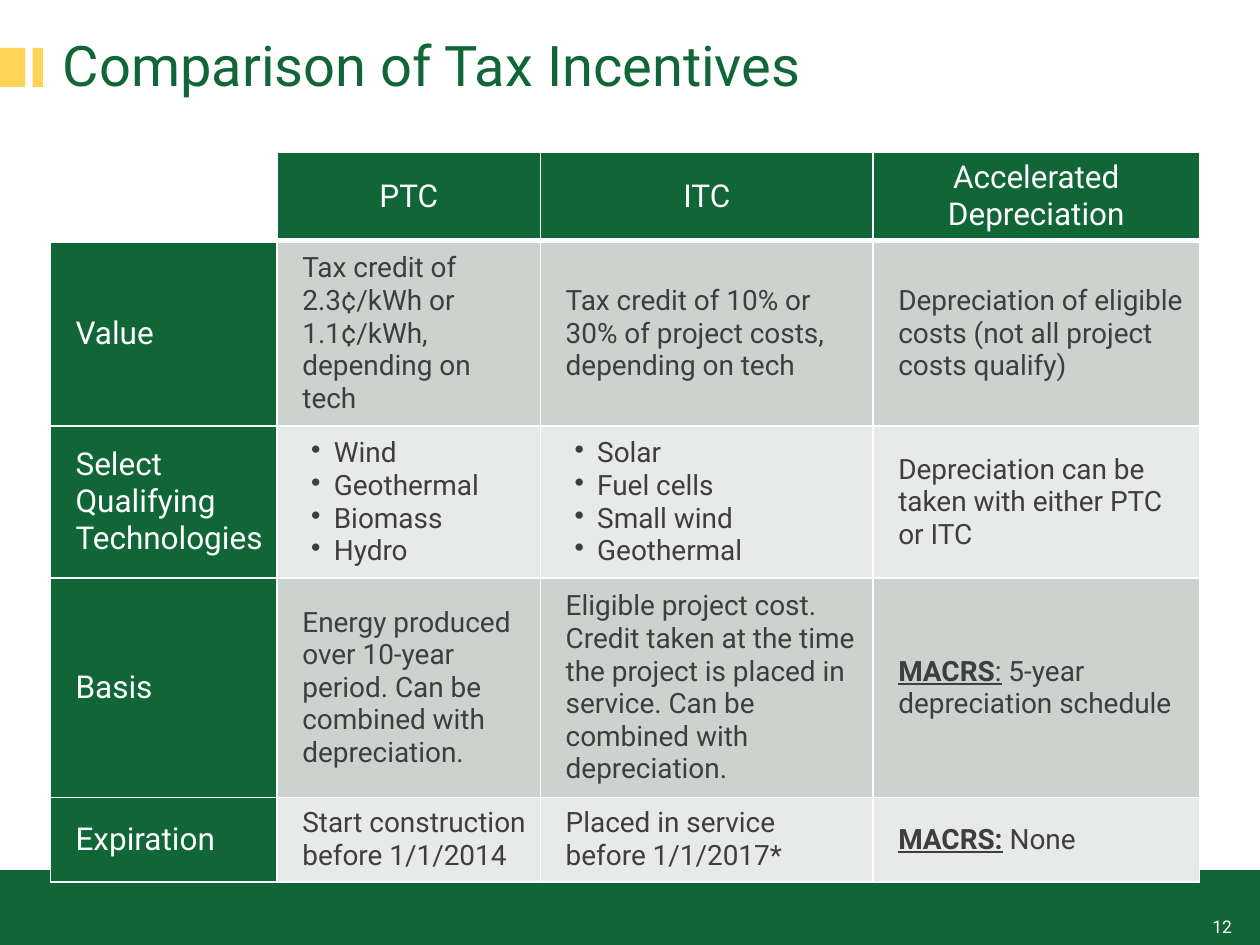
import pptx
import pptx.dml.color
import pptx.enum.shapes
import pptx.enum.text
import pptx.oxml
import pptx.oxml.ns
import pptx.util

GREEN, GOLD, WHITE, GREY = "106636", "FFD457", "FFFFFF", "3E3E3E"
BANDS = ["CCD3CE", "E7EAE8"]
FONT = "Roboto"

deck = pptx.Presentation()
deck.slide_width = pptx.util.Inches(10)
deck.slide_height = pptx.util.Inches(7.5)
unit = deck.slide_width // 100  # the slide is a grid of 100 columns by 75 rows
slide = deck.slides.add_slide(deck.slide_layouts[6])
shapes = slide.shapes


def grid(*cells):
    """Turn counts of grid cells into lengths."""
    return [pptx.util.Emu(round(n * unit)) for n in cells]


def paint(target, tone):
    """Give a fill, line or font a solid colour."""
    if hasattr(target, "solid"):
        target.solid()
        target = target.fore_color
    else:
        target = target.color
    target.rgb = pptx.dml.color.RGBColor.from_string(tone)


# Footer band, its top rule and the two title marks
for place, tone in [
    ((0, 69.1, 100, 5.9), GREEN),
    ((0, 3.8, 2, 3.1), GOLD),
    ((2.6, 3.8, 0.8, 3.1), GOLD),
]:
    bar = shapes.add_shape(pptx.enum.shapes.MSO_SHAPE.RECTANGLE, *grid(*place))
    bar.shadow.inherit = False
    paint(bar.fill, tone)
    bar.line.fill.background()

rule = shapes.add_connector(
    pptx.enum.shapes.MSO_CONNECTOR.STRAIGHT, *grid(0, 69.1, 100, 69.1))
paint(rule.line, GREEN)
rule.line.width = pptx.util.Pt(0.5)
pptx.oxml.ns.qn("a:effectLst")
rule._element.spPr.append(pptx.oxml.parse_xml(
    '<a:effectLst xmlns:a="http://schemas.openxmlformats.org/drawingml/2006/main"/>'))

# Title and page number
align = pptx.enum.text.PP_ALIGN
anchor = pptx.enum.text.MSO_ANCHOR
for text, place, size, tone, side, hold in [
    ("Comparison of Tax Incentives", (4, 1.9, 90, 10.8), 32, GREEN,
     align.LEFT, anchor.TOP),
    ("12", (94, 72.1, 6, 2.9), 10, WHITE, align.CENTER, anchor.MIDDLE),
]:
    frame = shapes.add_textbox(*grid(*place)).text_frame
    frame.word_wrap = True
    frame.vertical_anchor = hold
    frame.text = text
    frame.paragraphs[0].alignment = side
    font = frame.paragraphs[0].runs[0].font
    font.name, font.size = FONT, pptx.util.Pt(size)
    paint(font, tone)

# Table: a list is a bulleted cell, a tuple holds runs of (text, bold, underline)
rows = [
    ["", "PTC", "ITC", "Accelerated Depreciation"],
    ["Value",
     "Tax credit of 2.3¢/kWh or 1.1¢/kWh, depending on tech",
     "Tax credit of 10% or 30% of project costs, depending on tech",
     "Depreciation of eligible costs (not all project costs qualify)"],
    ["Select Qualifying Technologies",
     ["Wind", "Geothermal", "Biomass", "Hydro"],
     ["Solar", "Fuel cells", "Small wind", "Geothermal"],
     "Depreciation can be taken with either PTC\vor ITC"],
    ["Basis",
     "Energy produced over 10-year period. Can be combined with depreciation.",
     "Eligible project cost. Credit taken at the time the project is placed "
     "in service. Can be combined with depreciation.",
     (("MACRS", True, True), (":", False, True),
      (" 5-year depreciation schedule", False, False))],
    ["Expiration",
     "Start construction before 1/1/2014",
     "Placed in service before 1/1/2017*",
     (("MACRS:", True, True), (" None", False, False))],
]
widths = [18, 20.9, 26.4, 25.9]
heights = [6.8, 14.3, 11.7, 16.9, 6.5]
table = shapes.add_table(
    len(rows), len(widths), *grid(4, 12.1, sum(widths), sum(heights))).table
for col, wide in zip(table.columns, grid(*widths)):
    col.width = wide
for row, high in zip(table.rows, grid(*heights)):
    row.height = high

for r, row in enumerate(rows):
    for c, item in enumerate(row):
        cell = table.cell(r, c)
        head, label = r == 0, c == 0
        cell.vertical_anchor = anchor.MIDDLE
        if not head:
            pad = 0.5 if label else 0.7
            (cell.margin_left, cell.margin_top, cell.margin_right,
             cell.margin_bottom) = grid(2, pad, 1, pad)

        for edge in "LRTB":
            thick = pptx.util.Pt(3 if head and edge == "B" else 1)
            cell._tc.get_or_add_tcPr().append(pptx.oxml.parse_xml(
                f'<a:ln{edge} xmlns:a="http://schemas.openxmlformats.org/drawingml/2006/main"'
                f' w="{thick}"><a:solidFill><a:srgbClr val="{WHITE}"/></a:solidFill></a:ln{edge}>'))
        if head or label:
            tone = WHITE if head and label else GREEN
        else:
            tone = BANDS[(r - 1) % 2]
        paint(cell.fill, tone)

        frame = cell.text_frame
        if isinstance(item, tuple):
            for text, bold, under in item:
                run = frame.paragraphs[0].add_run()
                run.text = text
                run.font.bold, run.font.underline = bold, under
        else:
            frame.text = "\n".join(item) if isinstance(item, list) else item

        for para in frame.paragraphs:
            para.alignment = align.CENTER if head else align.LEFT
            if isinstance(item, list):
                props = para._p.get_or_add_pPr()
                left, hang = grid(2.5, -1.8)
                props.set("marL", str(left))
                props.set("indent", str(hang))
                props.append(pptx.oxml.parse_xml(
                    '<a:buChar xmlns:a="http://schemas.openxmlformats.org/drawingml/2006/main"'
                    ' char="•"/>'))
            for run in para.runs:
                font = run.font
                font.name = FONT
                font.size = pptx.util.Pt(18 if head or label else 16)
                font.bold = bool(font.bold)
                paint(font, WHITE if head or label else GREY)

deck.save("out.pptx")
